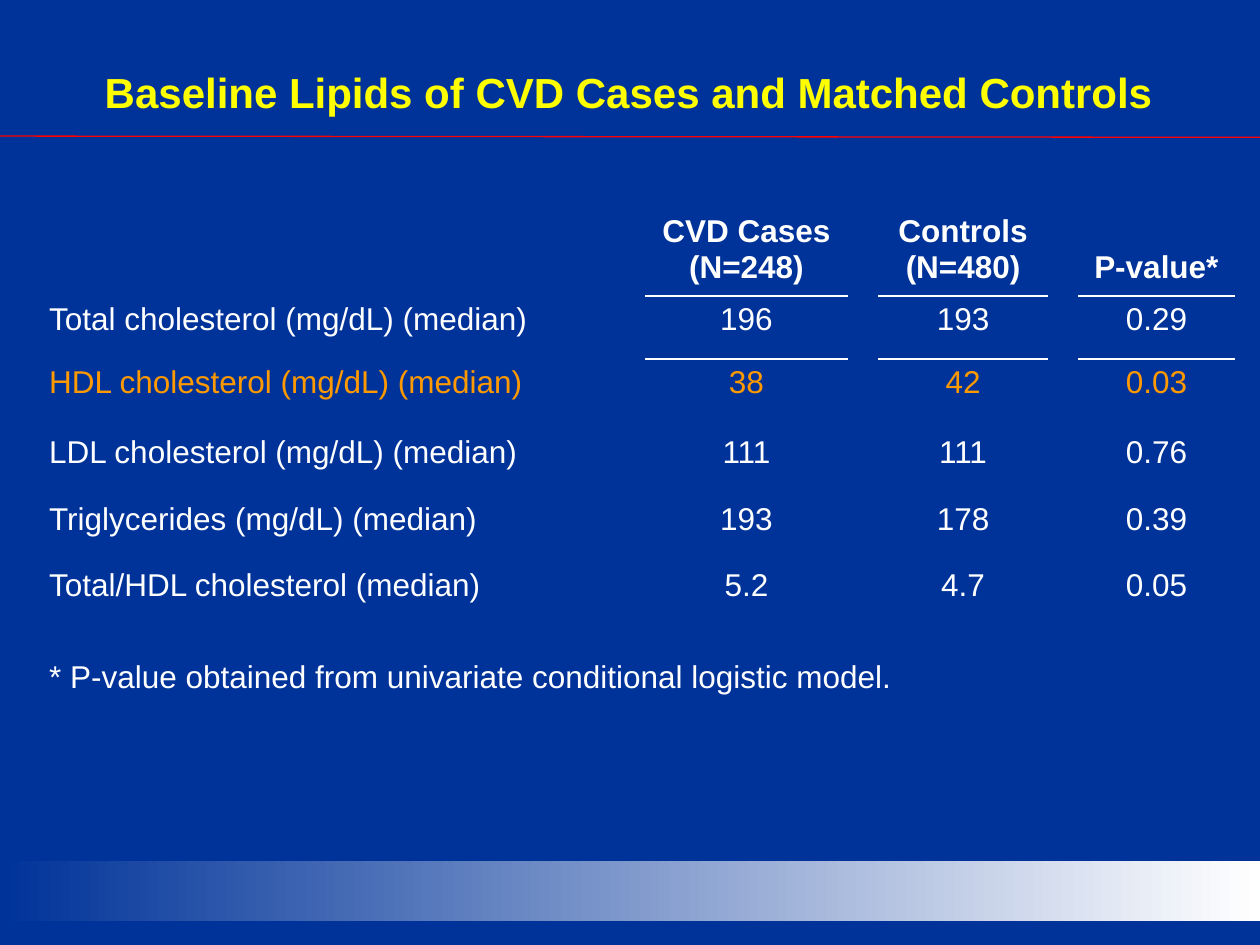
"""Build a slide with a table of baseline lipids in CVD cases and controls."""
from lxml import etree
from pptx import Presentation
from pptx.dml.color import RGBColor
from pptx.enum import shapes, text
from pptx.oxml import ns
from pptx.util import Inches, Pt

NAVY = RGBColor(0x00, 0x33, 0x99)
WHITE = RGBColor(0xFF, 0xFF, 0xFF)
YELLOW = RGBColor(0xFF, 0xFF, 0x00)
ORANGE = RGBColor(0xFF, 0x99, 0x00)
RED = RGBColor(0xFF, 0x00, 0x00)
LEFT, CENTER = text.PP_ALIGN.LEFT, text.PP_ALIGN.CENTER
NO_STYLE = "{2D5ABB26-0587-4C30-8999-92F81FD0307C}"


def write(frame, words, size=18, color=WHITE, bold=False, align=LEFT):
    frame.word_wrap = True
    para = frame.paragraphs[0]
    para.text = words
    para.alignment = align
    for font in [para.font] + [span.font for span in para.runs]:
        font.name = "Arial"
        font.size = Pt(size)
        font.bold = bold
        font.color.rgb = color


def add_border(cell, side):
    properties = cell._tc.get_or_add_tcPr()
    line = etree.SubElement(properties, ns.qn(f"a:{side}"), w=str(Pt(1.5)))
    fill = etree.SubElement(line, ns.qn("a:solidFill"))
    etree.SubElement(fill, ns.qn("a:srgbClr"), val=str(WHITE))


deck = Presentation()
deck.slide_width, deck.slide_height = Inches(10), Inches(7.5)
page = deck.slides.add_slide(deck.slide_layouts[6])
page.background.fill.solid()
page.background.fill.fore_color.rgb = NAVY

band = page.shapes.add_shape(
    shapes.MSO_SHAPE.RECTANGLE, Inches(0), Inches(6.83), Inches(10), Inches(0.48))
band.shadow.inherit = False
band.line.fill.background()
band.fill.gradient()
band.fill.gradient_angle = 0
for stop, color in zip(band.fill.gradient_stops, (NAVY, WHITE)):
    stop.color.rgb = color

title = page.shapes.add_textbox(Inches(0.16), Inches(0.1), Inches(9.66), Inches(1.25))
title.text_frame.vertical_anchor = text.MSO_ANCHOR.MIDDLE
write(title.text_frame, "Baseline Lipids of CVD Cases and Matched Controls",
      size=24, color=YELLOW, bold=True, align=CENTER)

rows = [
    ("", "CVD Cases\v(N=248)", "Controls\v(N=480)", "P-value*"),
    ("Total cholesterol (mg/dL) (median)", "196", "193", "0.29"),
    ("HDL cholesterol (mg/dL) (median)", "38", "42", "0.03"),
    ("LDL cholesterol (mg/dL) (median)", "111", "111", "0.76"),
    ("Triglycerides (mg/dL) (median)", "193", "178", "0.39"),
    ("Total/HDL cholesterol (median)", "5.2", "4.7", "0.05"),
    ("* P-value obtained from univariate conditional logistic model.",),
]
widths = [4.59, 0.23, 1.61, 0.23, 1.35, 0.23, 1.24]
heights = [0.72, 0.5, 0.55, 0.53, 0.53, 0.39, 0.77]
HEADER, FIRST, HDL, NOTE = 0, 1, 2, len(rows) - 1

frame = page.shapes.add_table(len(rows), len(widths), Inches(0.29), Inches(1.61),
                              Inches(sum(widths)), Inches(sum(heights)))
table = frame.table
table.first_row = table.horz_banding = False
table._tbl.tblPr.find(ns.qn("a:tableStyleId")).text = NO_STYLE
for column, width in zip(table.columns, widths):
    column.width = Inches(width)
for row, height in zip(table.rows, heights):
    row.height = Inches(height)

for r, values in enumerate(rows):
    for c, value in enumerate(values):
        cell = table.cell(r, 2 * c)
        if value:
            write(cell.text_frame, value, color=ORANGE if r == HDL else WHITE,
                  bold=r == HEADER, align=CENTER if c else LEFT)
        if c and r == HEADER:
            cell.vertical_anchor = text.MSO_ANCHOR.BOTTOM
            cell.margin_bottom = Inches(0.09)
            add_border(cell, "lnB")
        elif c and r == FIRST:
            add_border(cell, "lnT")
for cell in table.iter_cells():
    cell.fill.background()

note = table.cell(NOTE, 0)
note.merge(table.cell(NOTE, len(widths) - 1))
note.margin_top = Inches(0.38)

rule = page.shapes.add_connector(
    shapes.MSO_CONNECTOR.STRAIGHT, Inches(0), Inches(1.08), Inches(10), Inches(1.09))
rule.line.color.rgb = RED
rule.line.width = Pt(0.75)
etree.SubElement(rule._element.spPr, ns.qn("a:effectLst"))

deck.save("out.pptx")
